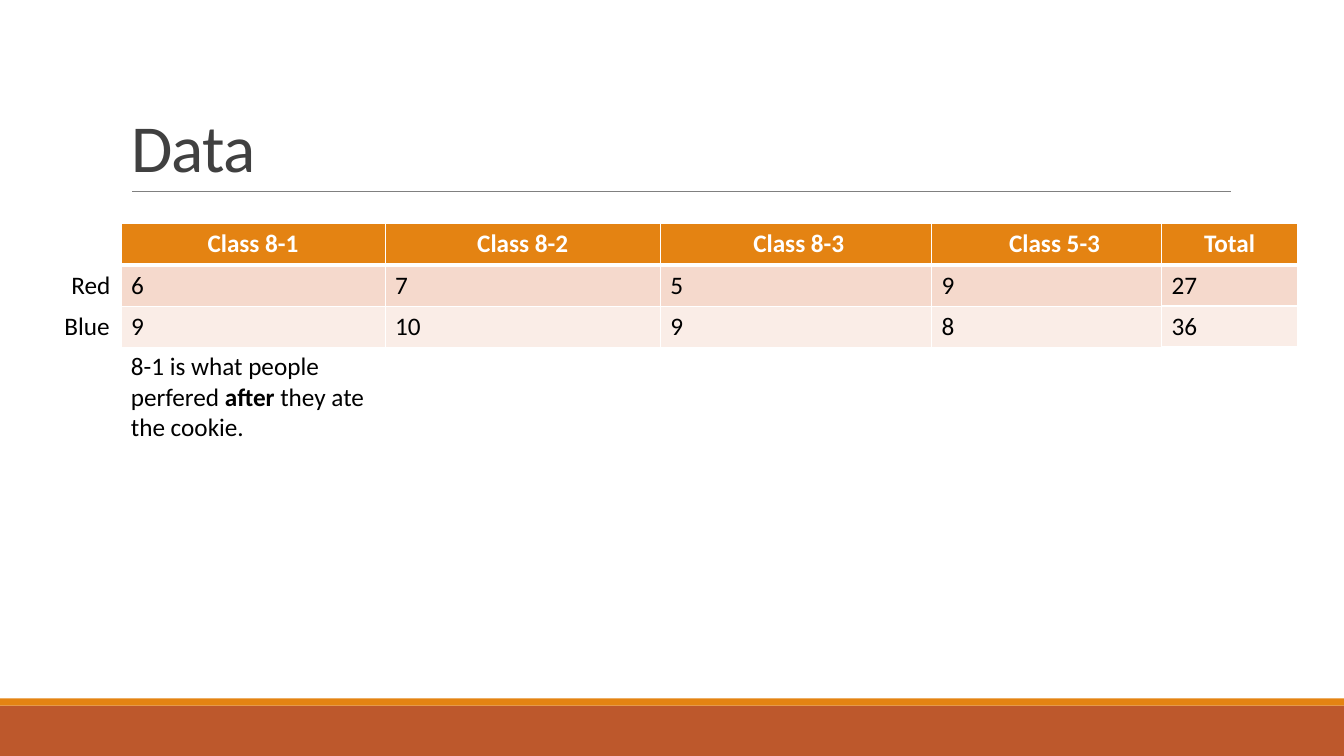
from dataclasses import dataclass

from lxml.etree import SubElement
from pptx import Presentation
from pptx.dml.color import RGBColor
from pptx.enum.shapes import MSO_CONNECTOR, MSO_SHAPE
from pptx.enum.text import MSO_ANCHOR, PP_ALIGN
from pptx.oxml.ns import qn
from pptx.util import Inches, Pt


@dataclass(frozen=True)
class Theme:
    font: str = "Calibri"
    title_size: int = 48
    body_size: int = 18
    title: str = "404040"
    text: str = "000000"
    white: str = "FFFFFF"
    rule: str = "808080"
    orange: str = "E48312"
    rust: str = "BD582C"
    row_fills: tuple = ("E48312", "F5D9CC", "FAEDE7")


theme = Theme()


def style_font(paragraph, size, color, bold=None):
    paragraph.font.name = theme.font
    paragraph.font.size = Pt(size)
    paragraph.font.color.rgb = RGBColor.from_string(color)
    paragraph.font.bold = bold


def add_cell_border(cell, side, points):
    properties = cell._tc.get_or_add_tcPr()
    line = SubElement(properties, qn(f"a:ln{side}"), w=str(Pt(points)))
    fill = SubElement(line, qn("a:solidFill"))
    SubElement(fill, qn("a:srgbClr"), val=theme.white)


presentation = Presentation()
presentation.slide_width = Inches(13.33)
presentation.slide_height = Inches(7.5)
slide = presentation.slides.add_slide(presentation.slide_layouts[5])

# Footer bands
for top, height, color in [(7, 0.5, theme.rust), (6.93, 0.07, theme.orange)]:
    band = slide.shapes.add_shape(
        MSO_SHAPE.RECTANGLE, 0, Inches(top), presentation.slide_width, Inches(height)
    )
    band.shadow.inherit = False
    band.fill.solid()
    band.fill.fore_color.rgb = RGBColor.from_string(color)
    band.line.fill.background()

# Title and the rule below it
title = slide.shapes.title
title.left, title.top = Inches(1.2), Inches(0.31)
title.width, title.height = Inches(11), Inches(1.59)
title.text_frame.text = "Data"
title.text_frame.vertical_anchor = MSO_ANCHOR.BOTTOM
title.text_frame.word_wrap = True
paragraph = title.text_frame.paragraphs[0]
paragraph.alignment = PP_ALIGN.LEFT
paragraph.line_spacing = 0.85
style_font(paragraph, theme.title_size, theme.title)
paragraph.runs[0].font._element.set("spc", "-50")

rule = slide.shapes.add_connector(
    MSO_CONNECTOR.STRAIGHT, Inches(1.31), Inches(1.9), Inches(12.21), Inches(1.9)
)
rule.line.color.rgb = RGBColor.from_string(theme.rule)
rule.line.width = Pt(0.5)
SubElement(rule._element.spPr, qn("a:effectLst"))

# Class table and total table: left edge, column widths, row heights, rows
tables = [
    (1.2, [2.62, 2.73, 2.69, 2.44], [0.41, 0.41, 0.41], [
        ["Class 8-1", "Class 8-2", " Class 8-3", "Class 5-3"],
        ["6", "7", "5", "9"],
        ["9", "10", "9", "8"],
    ]),
    (11.52, [1.35], [0.41, 0.4, 0.4], [["Total"], ["27"], ["36"]]),
]

# Row labels and note: left, top, width, height, runs with bold flag
notes = [
    (0.61, 2.62, 0.61, 0.4, [("Red", False)]),
    (0.54, 3.03, 0.73, 0.4, [("Blue", False)]),
    (1.2, 3.43, 2.63, 1.01, [
        ("8-1 is what people perfered ", False),
        ("after", True),
        (" they ate the cookie.", False),
    ]),
]

for left, widths, heights, rows in tables:
    table = slide.shapes.add_table(
        len(rows), len(widths), Inches(left), Inches(2.22),
        Inches(sum(widths)), Inches(sum(heights)),
    ).table
    for column, width in zip(table.columns, widths):
        column.width = Inches(width)
    for row_index, values in enumerate(rows):
        table.rows[row_index].height = Inches(heights[row_index])
        is_header = row_index == 0
        for column_index, value in enumerate(values):
            cell = table.cell(row_index, column_index)
            for side in "LRTB":
                thick = (is_header and side == "B") or (row_index == 1 and side == "T")
                add_cell_border(cell, side, 3 if thick else 1)
            cell.fill.solid()
            cell.fill.fore_color.rgb = RGBColor.from_string(theme.row_fills[row_index])
            cell.text = value
            paragraph = cell.text_frame.paragraphs[0]
            paragraph.alignment = PP_ALIGN.CENTER if is_header else PP_ALIGN.LEFT
            style_font(
                paragraph, theme.body_size,
                theme.white if is_header else theme.text, is_header,
            )

for left, top, width, height, runs in notes:
    box = slide.shapes.add_textbox(
        Inches(left), Inches(top), Inches(width), Inches(height)
    )
    box.text_frame.word_wrap = True
    paragraph = box.text_frame.paragraphs[0]
    style_font(paragraph, theme.body_size, theme.text)
    for text, bold in runs:
        run = paragraph.add_run()
        run.text = text
        run.font.bold = bold

presentation.save("out.pptx")
